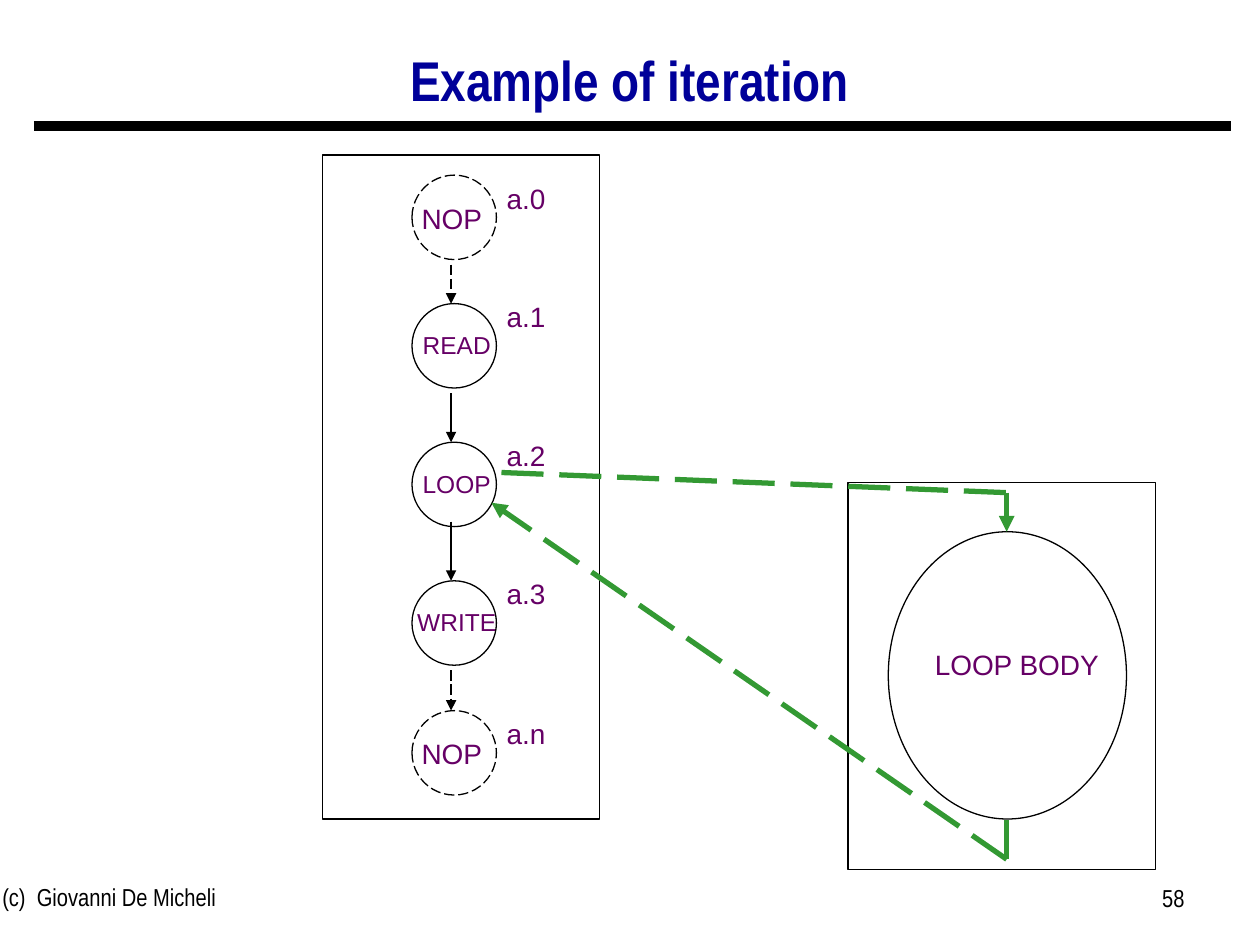
"""Build the slide "Example of iteration" with its sequencing graph and loop body."""
import pptx
import pptx.dml.color
import pptx.enum.dml
import pptx.enum.shapes
import pptx.enum.text
import pptx.oxml
import pptx.oxml.ns
import pptx.util

Inches = pptx.util.Inches
colour = pptx.dml.color.RGBColor.from_string
SHAPES = pptx.enum.shapes.MSO_SHAPE
ALIGN = pptx.enum.text.PP_ALIGN
DASH = pptx.enum.dml.MSO_LINE.LONG_DASH
BLACK, PURPLE, GREEN, NAVY = "000000", "660066", "339933", "000099"


def write_text(box, text, size, font_name, text_colour, align, bold=False):
    """Put one formatted line of text in a box."""
    box.text_frame.word_wrap = True
    para = box.text_frame.paragraphs[0]
    para.alignment = align
    span = para.add_run()
    span.text = text
    font_format = {"size": pptx.util.Pt(size), "name": font_name, "bold": bold}
    for name, value in font_format.items():
        setattr(span.font, name, value)
    span.font.color.rgb = colour(text_colour)
    return para


def add_line(start, end, line_colour=BLACK, width=0.75, dash=None, arrow=False):
    """Draw a straight line between two points given in inches."""
    line = page.shapes.add_connector(
        pptx.enum.shapes.MSO_CONNECTOR.STRAIGHT, *map(Inches, start + end))
    line.line.color.rgb = colour(line_colour)
    line.line.width = pptx.util.Pt(width)
    line.line.dash_style = dash
    if arrow:
        head = pptx.oxml.parse_xml(
            f'<a:tailEnd {pptx.oxml.ns.nsdecls("a")} type="triangle"/>')
        line.line._get_or_add_ln().append(head)
    effects = pptx.oxml.parse_xml(f'<a:effectLst {pptx.oxml.ns.nsdecls("a")}/>')
    line._element.spPr.append(effects)


deck = pptx.Presentation()
deck.slide_width, deck.slide_height = Inches(10), Inches(7.5)
page = deck.slides.add_slide(deck.slide_layouts[5])

title = page.shapes.title
title_place = {"left": 0.75, "top": 0.13, "width": 8.5, "height": 1.07}
for name, value in title_place.items():
    setattr(title, name, Inches(value))
title.text_frame.vertical_anchor = pptx.enum.text.MSO_ANCHOR.MIDDLE
title_para = write_text(title, "Example of iteration", 32, "Arial Narrow", NAVY,
                        ALIGN.CENTER, True)
title_para.line_spacing = 0.9
add_line((0.27, 1), (9.77, 1), width=6)

footers = [
    ("(c)  Giovanni De Micheli", (-0.08, 6.95, 3.17, 0.52), ALIGN.LEFT),
    ("58", (7.17, 6.96, 2.33, 0.52), ALIGN.RIGHT),
]
for text, place, align in footers:
    box = page.shapes.add_textbox(*map(Inches, place))
    write_text(box, text, 14, "Arial Narrow", BLACK, align)

node_left, node_size, arrow_x = 3.27, 0.67, 3.58
nodes = [
    ("NOP", 1.39, "a.0", 1.39, 16, 0.79, DASH),
    ("READ", 2.41, "a.1", 2.33, 14, 0.87, None),
    ("LOOP", 3.51, "a.2", 3.43, 14, 0.87, None),
    ("WRITE", 4.61, "a.3", 4.53, 14, 0.87, None),
    ("NOP", 5.64, "a.n", 5.64, 16, 0.79, DASH),
]
outlines = [
    (SHAPES.RECTANGLE, (2.56, 1.23, 2.2, 5.27), None),
    (SHAPES.RECTANGLE, (6.73, 3.83, 2.44, 3.07), None),
    (SHAPES.OVAL, (7.05, 4.22, 1.89, 2.28), None),
]
labels = [("LOOP BODY", (6.89, 5.09, 2.36, 0.37), 16)]
for text, top, tag, tag_top, size, width, dash in nodes:
    outlines.append((SHAPES.OVAL, (node_left, top, node_size, node_size), dash))
    labels.append((text, (3.19, top + 0.16, width, 0.37), size))
    labels.append((tag, (3.9, tag_top, 0.55, 0.37), 16))

for kind, place, dash in outlines:
    shape = page.shapes.add_shape(kind, *map(Inches, place))
    shape.shadow.inherit = False
    shape.fill.background()
    shape.line.color.rgb = colour(BLACK)
    shape.line.width = pptx.util.Pt(0.75)
    shape.line.dash_style = dash

for text, place, size in labels:
    box = page.shapes.add_textbox(*map(Inches, place))
    write_text(box, text, size, "Arial", PURPLE, ALIGN.CENTER)

for start, end, dash in [(2.1, 2.41, DASH), (3.12, 3.51, None),
                         (4.14, 4.61, None), (5.32, 5.64, DASH)]:
    add_line((arrow_x, start), (arrow_x, end), dash=dash, arrow=True)

body_x = 7.99
loop_lines = [
    ((body_x, 6.51), (body_x, 6.82), False),
    ((body_x, 6.82), (3.9, 3.99), True),
    ((3.98, 3.75), (body_x, 3.91), False),
    ((body_x, 3.91), (body_x, 4.22), True),
]
for start, end, arrow in loop_lines:
    add_line(start, end, GREEN, 3, DASH, arrow)

deck.save("out.pptx")
